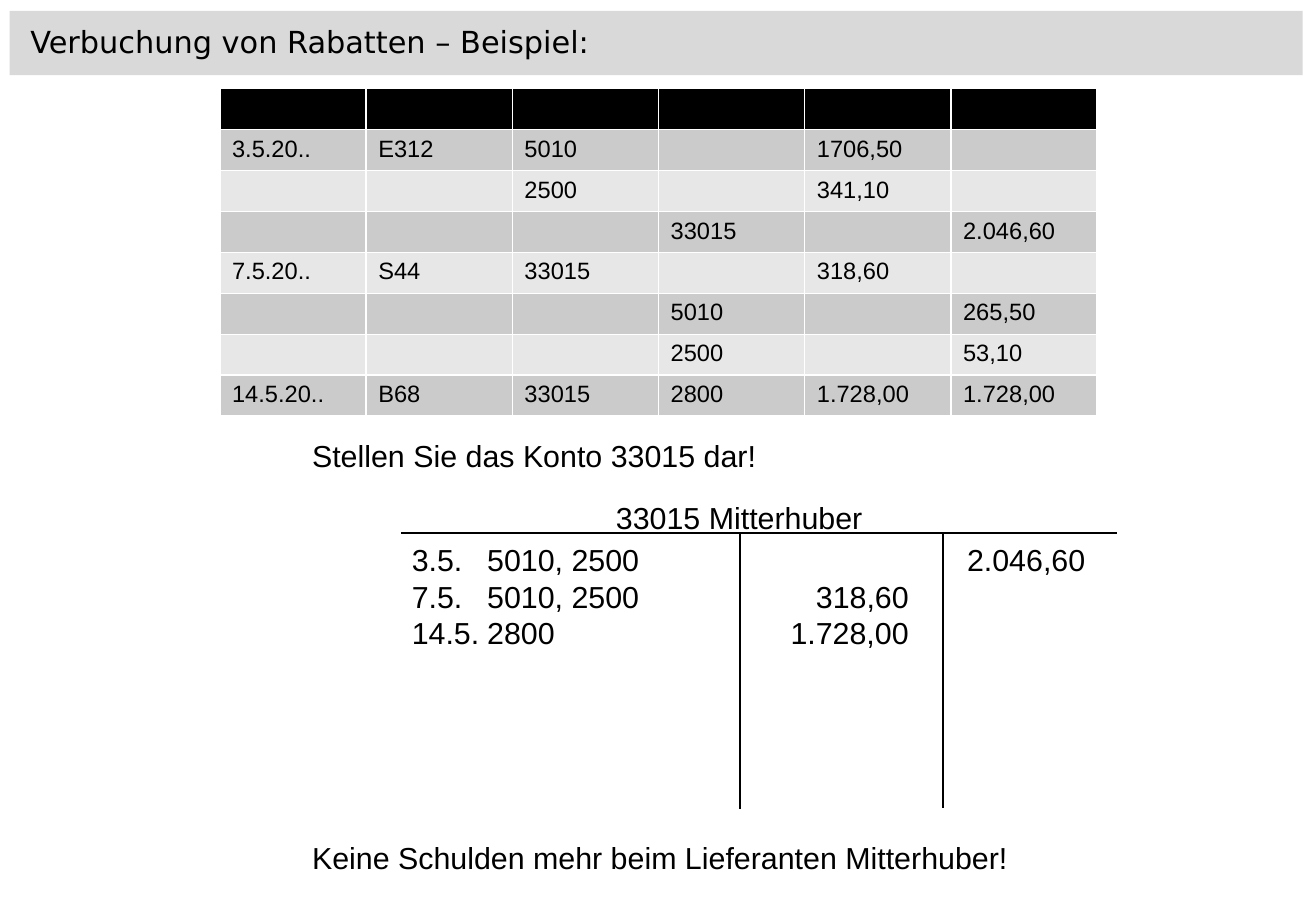
from pptx import Presentation
from pptx.dml.color import RGBColor
from pptx.enum import shapes, text
from pptx.oxml import parse_xml
from pptx.oxml.ns import nsdecls
from pptx.util import Inches, Pt

BLACK, BAND, DARK, LIGHT = "000000", "D9D9D9", "CBCBCB", "E7E7E7"
JOURNAL = [
    ["", "", "", "", "", ""],
    ["3.5.20..", "E312", "5010", "", "1706,50", ""],
    ["", "", "2500", "", "341,10", ""],
    ["", "", "", "33015", "", "2.046,60"],
    ["7.5.20..", "S44", "33015", "", "318,60", ""],
    ["", "", "", "5010", "", "265,50"],
    ["", "", "", "2500", "", "53,10"],
    ["14.5.20..", "B68", "33015", "2800", "1.728,00", "1.728,00"],
]
ENTRIES = ["3.5.\t5010, 2500", "7.5.\t5010, 2500\t318,60", "14.5.\t2800\t1.728,00"]


def paint(fill, color):
    fill.solid()
    fill.fore_color.rgb = RGBColor.from_string(color)


def style(para, size=18, face="Arial"):
    for run in para.runs:
        run.font.size = Pt(size)
        run.font.name = face
        run.font.bold = False
        run.font.color.rgb = RGBColor.from_string(BLACK)


def place(shape, left, top, width, height):
    shape.left, shape.top = Inches(left), Inches(top)
    shape.width, shape.height = Inches(width), Inches(height)


def add_title(slide, words):
    """Fill the title placeholder and lay the grey band behind it."""
    title = slide.shapes.title
    place(title, 0.15, 0.14, 4.86, 0.4)
    frame = title.text_frame
    frame.text = words
    frame.auto_size = text.MSO_AUTO_SIZE.NONE
    frame.vertical_anchor = text.MSO_ANCHOR.TOP
    para = frame.paragraphs[0]
    para.alignment = text.PP_ALIGN.LEFT
    style(para, face="DejaVu Sans")
    band = slide.shapes.add_shape(
        shapes.MSO_SHAPE.RECTANGLE, Inches(0.08), Inches(0.09), Inches(10.64), Inches(0.53))
    band.shadow.inherit = False
    paint(band.fill, BAND)
    band.line.fill.background()
    title._element.addprevious(band._element)


def add_text(slide, left, top, width, lines, tabs=()):
    """Add a text box; tabs holds pairs of position in inches and alignment."""
    box = slide.shapes.add_textbox(
        Inches(left), Inches(top), Inches(width), Inches(0.1 + 0.3 * len(lines)))
    frame = box.text_frame
    frame.word_wrap = True
    frame.text = "\n".join(lines)
    for para in frame.paragraphs:
        if tabs:
            stops = "".join(f'<a:tab pos="{Inches(pos)}" algn="{side}"/>' for pos, side in tabs)
            para._p.get_or_add_pPr().append(
                parse_xml(f'<a:tabLst {nsdecls("a")}>{stops}</a:tabLst>'))
        style(para)


def add_table(slide, left, top, width, height, rows):
    frame = slide.shapes.add_table(
        len(rows), len(rows[0]), Inches(left), Inches(top), Inches(width), Inches(height))
    for r, row in enumerate(rows):
        color = BLACK if r == 0 else DARK if r % 2 else LIGHT
        for c, words in enumerate(row):
            cell = frame.table.cell(r, c)
            paint(cell.fill, color)
            para = cell.text_frame.paragraphs[0]
            if words:
                para.text = words
                style(para, 14)
            else:
                # An empty cell needs its own text size, or the row grows
                para._p.append(parse_xml(f'<a:endParaRPr {nsdecls("a")} sz="1400"/>'))


def add_line(slide, x1, y1, x2, y2):
    line = slide.shapes.add_connector(
        shapes.MSO_CONNECTOR.STRAIGHT, Inches(x1), Inches(y1), Inches(x2), Inches(y2))
    line.line.width = Pt(1)
    line.line.color.rgb = RGBColor.from_string(BLACK)
    line._element.spPr.append(parse_xml(f'<a:effectLst {nsdecls("a")}/>'))


def add_account(slide):
    """Draw the T-account with its entries."""
    add_line(slide, 3.3, 4.39, 9.19, 4.39)
    add_line(slide, 6.09, 4.39, 6.09, 6.66)
    add_line(slide, 7.76, 4.38, 7.76, 6.65)
    add_text(slide, 4.97, 4.06, 2.25, ["33015 Mitterhuber"])
    add_text(slide, 7.86, 4.41, 1.18, ["2.046,60"])
    add_text(slide, 3.29, 4.41, 4.41, ENTRIES, [(0.62, "l"), (4.09, "r")])


def main():
    deck = Presentation()
    deck.slide_width, deck.slide_height = Inches(10.83), Inches(7.5)
    slide = deck.slides.add_slide(deck.slide_layouts.get_by_name("Title Only"))
    add_title(slide, "Verbuchung von Rabatten – Beispiel:")
    add_table(slide, 1.81, 0.73, 7.22, 2.68, JOURNAL)
    add_text(slide, 2.47, 3.55, 6, ["Stellen Sie das Konto 33015 dar!"])
    add_text(slide, 2.47, 6.86, 6, ["Keine Schulden mehr beim Lieferanten Mitterhuber!"])
    add_account(slide)
    deck.save("out.pptx")


if __name__ == "__main__":
    main()
